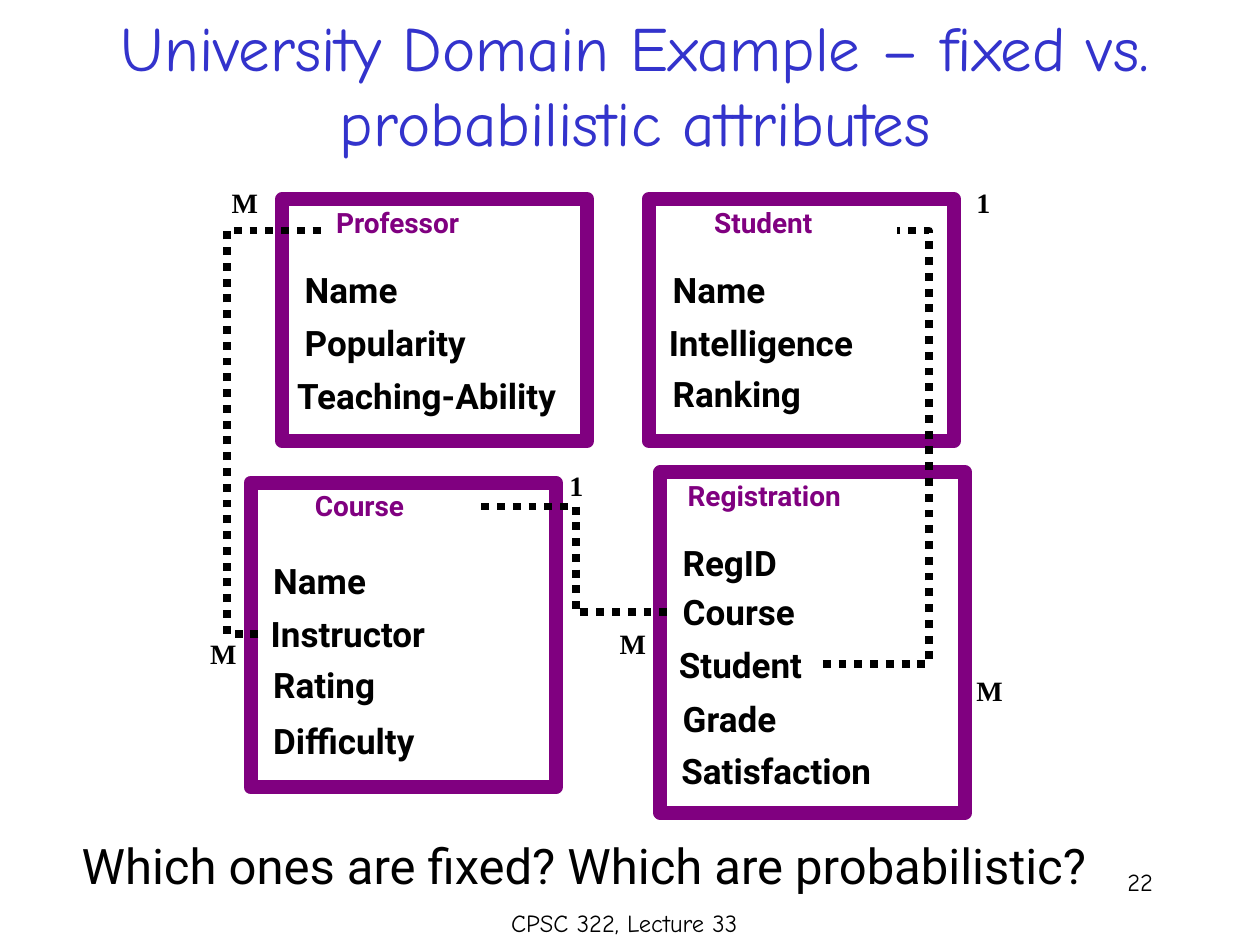
import pptx
import pptx.util
import pptx.dml.color
import pptx.enum.dml
import pptx.enum.shapes
import pptx.enum.text
import pptx.oxml
import pptx.oxml.ns

Inch = pptx.util.Inches
Auto = pptx.enum.text.MSO_AUTO_SIZE
Align = pptx.enum.text.PP_ALIGN

THEME = {
    "title": {"name": "Comic Neue", "size": 36, "bold": False, "color": "3333CC"},
    "class": {"name": "Roboto", "size": 16, "bold": True, "color": "800080"},
    "field": {"name": "Roboto", "size": 20, "bold": True, "color": "000000"},
    "count": {"name": "Times New Roman", "size": 16, "bold": True, "color": "000000"},
    "query": {"name": "Roboto", "size": 28, "bold": False, "color": "000000"},
    "foot": {"name": "Comic Neue", "size": 14, "bold": False, "color": "000000"},
    "frame": "800080",
    "paper": "FFFFFF",
    "link": "000000",
}

TITLE = "University Domain Example – fixed vs. probabilistic attributes"

CLASSES = [
    {"name": "Course", "frame": (1.99, 3.83, 2.42, 2.42), "head": (2.4, 1.42, 0.37),
     "fields": [("Name", 2.07, 4.39, 0.97), ("Instructor", 2.05, 4.81, 1.51),
                ("Rating", 2.07, 5.22, 1.07), ("Difficulty", 2.07, 5.66, 1.39)]},
    {"name": "Registration", "frame": (5.24, 3.75, 2.42, 2.7), "head": (5.36, 2.17, 0.37),
     "fields": [("RegID", 5.32, 4.25, 1.03), ("Course", 5.32, 4.64, 1.17),
                ("Student", 5.29, 5.06, 1.25), ("Grade", 5.32, 5.49, 1.01),
                ("Satisfaction", 5.31, 5.9, 1.79)]},
    {"name": "Student", "frame": (5.15, 1.58, 2.42, 1.92), "head": (5.57, 1.56, 0.5),
     "fields": [("Name", 5.24, 2.08, 0.97), ("Intelligence", 5.21, 2.5, 1.74),
                ("Ranking", 5.24, 2.91, 1.31)]},
    {"name": "Professor", "frame": (2.24, 1.58, 2.42, 1.92), "head": (2.57, 1.83, 0.5),
     "fields": [("Name", 2.32, 2.08, 0.97), ("Popularity", 2.32, 2.5, 1.57),
                ("Teaching-Ability", 2.26, 2.92, 2.37)]},
]

LINKS = [
    ((3.82, 4.02), (5.32, 4.86), 4.57),
    ((6.53, 5.27), (7.12, 1.83), 7.37),
    ((2.05, 5.03), (2.57, 1.83), 1.8),
]

COUNTS = [("M", 1.74, 1.42), ("M", 1.57, 5), ("M", 7.65, 5.3),
          ("1", 7.65, 1.42), ("1", 4.42, 3.67), ("M", 4.82, 4.92)]
WIDTHS = {"M": 0.41, "1": 0.31}

QUERY = ("Which ones are fixed? Which are probabilistic?", (0.55, 6.58, 8.38, 0.57))
FEET = [("CPSC 322, Lecture 33", (3.37, 7.16, 3.17, 0.5), Align.CENTER),
        ("22", (7.17, 6.83, 2.08, 0.5), Align.RIGHT)]


def apply(item, **vals):
    for key, val in vals.items():
        setattr(item, key, val)


def tint(code):
    return pptx.dml.color.RGBColor.from_string(code)


def write(shape, text, style, align=Align.LEFT, **frame):
    apply(shape.text_frame, **frame)
    para = shape.text_frame.paragraphs[0]
    para.alignment = align
    run = para.add_run()
    run.text = text
    form = THEME[style]
    apply(run.font, name=form["name"], size=pptx.util.Pt(form["size"]), bold=form["bold"])
    run.font.color.rgb = tint(form["color"])


def label(slide, text, box, style, align=Align.LEFT, wrap=False, auto=Auto.SHAPE_TO_FIT_TEXT):
    shape = slide.shapes.add_textbox(*map(Inch, box))
    write(shape, text, style, align, word_wrap=wrap, auto_size=auto)
    return shape


def stroke(line, code, width):
    line.color.rgb = tint(code)
    line.width = pptx.util.Pt(width)


def draw_class(slide, entry):
    rect = slide.shapes.add_shape(
        pptx.enum.shapes.MSO_SHAPE.RECTANGLE, *map(Inch, entry["frame"]))
    rect.shadow.inherit = False
    rect.fill.solid()
    rect.fill.fore_color.rgb = tint(THEME["paper"])
    stroke(rect.line, THEME["frame"], 8)
    left, width, height = entry["head"]
    label(slide, entry["name"], (left, entry["frame"][1], width, height), "class", wrap=True)
    for row, (text, left, top, width) in enumerate(entry["fields"]):
        box = label(slide, text, (left, top, width, 0.44), "field")
        if row == 0:
            stroke(box.line, THEME["paper"], 1.5)


def draw_link(slide, start, end, bend):
    link = slide.shapes.add_connector(
        pptx.enum.shapes.MSO_CONNECTOR.ELBOW, *map(Inch, start + end))
    stroke(link.line, THEME["link"], 4.5)
    link.line.dash_style = pptx.enum.dml.MSO_LINE.ROUND_DOT
    props = link._element.spPr
    props.append(pptx.oxml.parse_xml(
        "<a:effectLst %s/>" % pptx.oxml.ns.nsdecls("a")))
    ratio = (bend - start[0]) / (end[0] - start[0])
    guide = pptx.oxml.parse_xml(
        '<a:gd %s name="adj1" fmla="val %d"/>'
        % (pptx.oxml.ns.nsdecls("a"), round(ratio * 100000)))
    props.find(".//" + pptx.oxml.ns.qn("a:avLst")).append(guide)


def main():
    deck = pptx.Presentation()
    apply(deck, slide_width=Inch(10), slide_height=Inch(7.5))
    slide = deck.slides.add_slide(deck.slide_layouts[5])
    title = slide.shapes.title
    apply(title, left=Inch(0.79), top=Inch(0.04), width=Inch(8.5), height=Inch(1.25))
    write(title, TITLE, "title", Align.CENTER, word_wrap=True, auto_size=Auto.NONE,
          vertical_anchor=pptx.enum.text.MSO_ANCHOR.MIDDLE)
    for entry in CLASSES:
        draw_class(slide, entry)
    for link in LINKS:
        draw_link(slide, *link)
    for text, left, top in COUNTS:
        label(slide, text, (left, top, WIDTHS[text], 0.37), "count")
    label(slide, *QUERY, "query")
    for text, box, align in FEET:
        label(slide, text, box, "foot", align, wrap=True, auto=Auto.NONE)
    deck.save("out.pptx")


if __name__ == "__main__":
    main()
